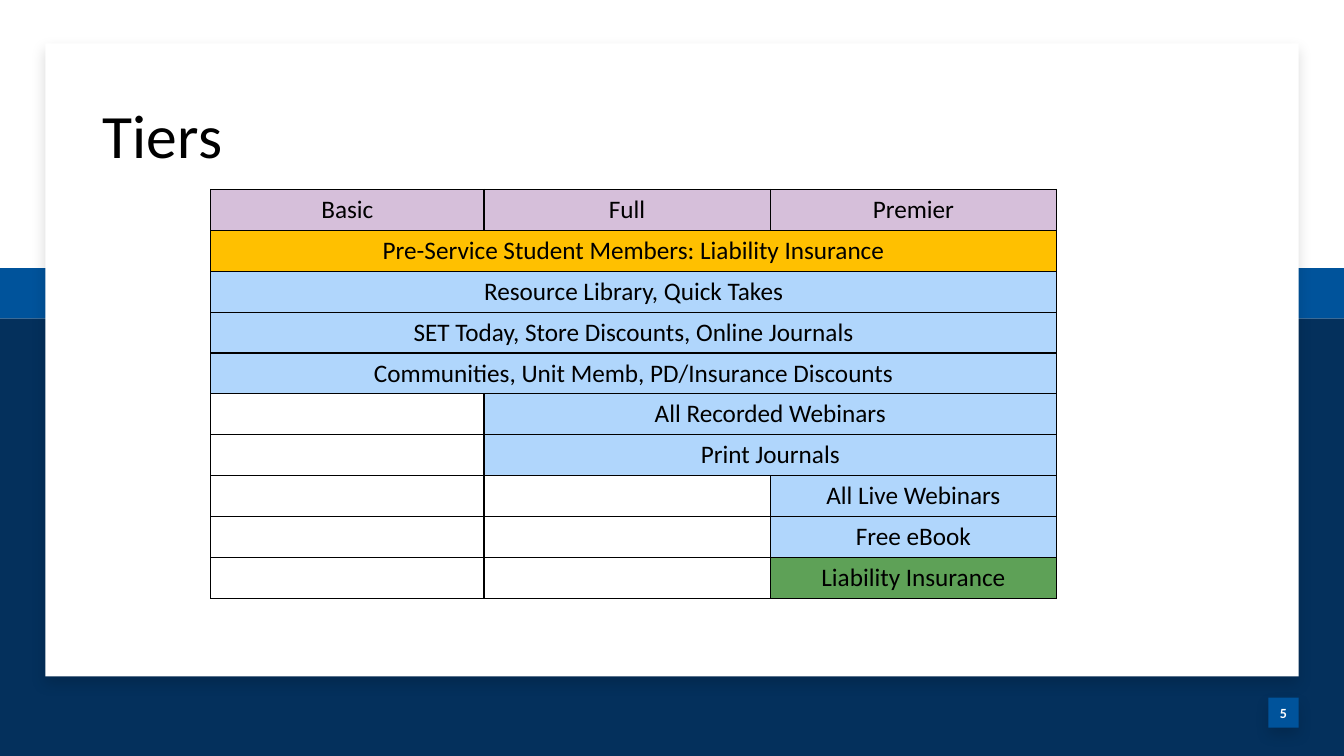
from lxml.etree import SubElement
from pptx import Presentation
from pptx.dml.color import RGBColor
from pptx.enum.shapes import MSO_SHAPE
from pptx.enum.text import MSO_ANCHOR, PP_ALIGN
from pptx.oxml import parse_xml
from pptx.oxml.ns import nsdecls, qn
from pptx.util import Inches, Pt

TITLE = "Tiers"
PAGE_NUMBER = "5"
FONT = "Calibri"
BLACK, WHITE, NAVY, BLUE = "000000", "FFFFFF", "04305C", "00539B"
LILAC, GOLD, SKY, GREEN = "D6BFDA", "FFC000", "B0D6FC", "5EA157"

TIERS = ["Basic", "Full", "Premier"]
# Benefit, index of the lowest tier that includes it, fill
BENEFITS = [
    ("Pre-Service Student Members: Liability Insurance", 0, GOLD),
    ("Resource Library, Quick Takes", 0, SKY),
    ("SET Today, Store Discounts, Online Journals", 0, SKY),
    ("Communities, Unit Memb, PD/Insurance Discounts", 0, SKY),
    ("All Recorded Webinars", 1, SKY),
    ("Print Journals", 1, SKY),
    ("All Live Webinars", 2, SKY),
    ("Free eBook", 2, SKY),
    ("Liability Insurance", 2, GREEN),
]

WIDTH, HEIGHT = 13.33, 7.5
MARGIN = 0.45
BAND_TOP, BAND_HEIGHT = 2.66, 0.5
BADGE = 0.3
TABLE_LEFT, TABLE_TOP = 2.09, 1.88
COLUMN_WIDTHS = [2.71, 2.84, 2.84]
ROW_HEIGHT = 0.4


def color(hex_string):
    return RGBColor.from_string(hex_string)


def format_text(paragraph, size, hex_string, bold=False):
    paragraph.font.name = FONT
    paragraph.font.size = Pt(size)
    paragraph.font.bold = bold
    paragraph.font.color.rgb = color(hex_string)


def add_panel(left, top, width, height, fill, shadow=False):
    shape = slide.shapes.add_shape(
        MSO_SHAPE.RECTANGLE, *map(Inches, (left, top, width, height)))
    shape.fill.solid()
    shape.fill.fore_color.rgb = color(fill)
    shape.line.fill.background()
    shape.shadow.inherit = False
    if shadow:
        effects = shape._element.spPr.find(qn("a:effectLst"))
        effects.append(parse_xml(
            f'<a:outerShdw {nsdecls("a")} blurRad="{Pt(10)}" dist="{Pt(5)}" '
            'dir="5400000" algn="t" rotWithShape="0"><a:srgbClr val="000000">'
            '<a:alpha val="15000"/></a:srgbClr></a:outerShdw>'))
    return shape


def set_cell(cell, text, fill):
    cell.text_frame.text = text
    paragraph = cell.text_frame.paragraphs[0]
    paragraph.alignment = PP_ALIGN.CENTER
    format_text(paragraph, 18, BLACK)
    properties = cell._tc.get_or_add_tcPr()
    for side in ("lnL", "lnR", "lnT", "lnB"):
        border = SubElement(properties, qn(f"a:{side}"), w=str(Pt(1)))
        line_fill = SubElement(border, qn("a:solidFill"))
        SubElement(line_fill, qn("a:srgbClr"), val=BLACK)
    cell.fill.solid()
    cell.fill.fore_color.rgb = color(fill)


presentation = Presentation()
presentation.slide_width = Inches(WIDTH)
presentation.slide_height = Inches(HEIGHT)
slide = presentation.slides.add_slide(presentation.slide_layouts[5])
title = slide.shapes.title

# Backdrop bands, card and page number
navy_top = BAND_TOP + BAND_HEIGHT
add_panel(0, navy_top, WIDTH, HEIGHT - navy_top, NAVY)
add_panel(0, BAND_TOP, WIDTH, BAND_HEIGHT, BLUE)
add_panel(MARGIN, 0.43, WIDTH - 2 * MARGIN, 6.28, WHITE, shadow=True)
badge = add_panel(WIDTH - MARGIN - BADGE, 6.92, BADGE, BADGE, BLUE, shadow=True)
frame = badge.text_frame
frame.margin_left = frame.margin_right = frame.margin_top = frame.margin_bottom = 0
frame.vertical_anchor = MSO_ANCHOR.MIDDLE
frame.text = PAGE_NUMBER
frame.paragraphs[0].alignment = PP_ALIGN.CENTER
format_text(frame.paragraphs[0], 10, WHITE, bold=True)

# Title, brought in front of the card
slide.shapes._spTree.append(title._element)
title.left, title.top, title.width, title.height = map(Inches, (0.92, 0.65, 11.5, 1.45))
title.text_frame.text = TITLE
title.text_frame.vertical_anchor = MSO_ANCHOR.MIDDLE
heading = title.text_frame.paragraphs[0]
heading.alignment = PP_ALIGN.LEFT
heading.line_spacing = 0.9
format_text(heading, 44, BLACK)

# Membership table: each benefit spans its lowest tier up to the last one
row_count = len(BENEFITS) + 1
last = len(TIERS) - 1
table = slide.shapes.add_table(
    row_count, len(TIERS), Inches(TABLE_LEFT), Inches(TABLE_TOP),
    Inches(sum(COLUMN_WIDTHS)), Inches(ROW_HEIGHT * row_count)).table
for column, width in zip(table.columns, COLUMN_WIDTHS):
    column.width = Inches(width)
for index, tier in enumerate(TIERS):
    set_cell(table.cell(0, index), tier, LILAC)
for row, (benefit, first, fill) in enumerate(BENEFITS, start=1):
    for index in range(len(TIERS)):
        text = benefit if index == first else ""
        set_cell(table.cell(row, index), text, fill if index >= first else WHITE)
    if first < last:
        table.cell(row, first).merge(table.cell(row, last))

presentation.save("out.pptx")
